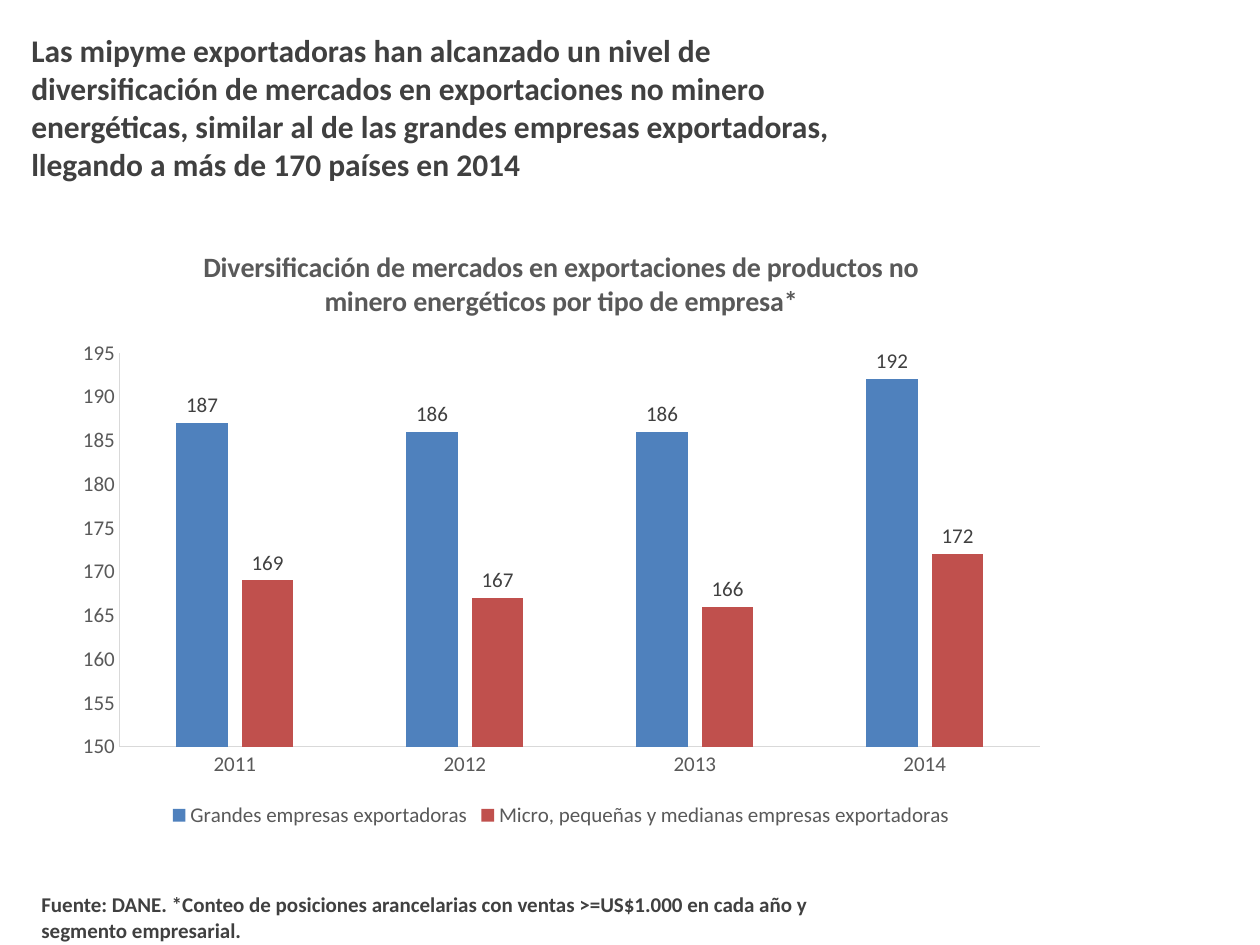
import pptx
import pptx.chart.data
import pptx.dml.color
import pptx.enum.chart
import pptx.enum.text
import pptx.util

Inches = pptx.util.Inches
DARK, GREY, PALE = "404040", "595959", "D9D9D9"
YEARS = ["2011", "2012", "2013", "2014"]
SERIES = [
    ("Grandes empresas exportadoras", (187, 186, 186, 192), "4F81BD"),
    ("Micro, pequeñas y medianas empresas exportadoras", (169, 167, 166, 172), "C0504D"),
]


def color(hex_text):
    return pptx.dml.color.RGBColor.from_string(hex_text)


class SlideBuilder:
    """Holds the font and the current slide, and adds styled elements to it."""

    def __init__(self, presentation, font_name="Calibri"):
        self.font_name = font_name
        self.slide = presentation.slides.add_slide(presentation.slide_layouts[6])

    def style(self, font, size, hex_text, bold=False):
        font.name = self.font_name
        font.size = pptx.util.Pt(size)
        font.bold = bold
        font.color.rgb = color(hex_text)

    def text(self, left, top, width, height, wording, size):
        shape = self.slide.shapes.add_textbox(
            Inches(left), Inches(top), Inches(width), Inches(height))
        frame = shape.text_frame
        frame.word_wrap = True
        frame.auto_size = pptx.enum.text.MSO_AUTO_SIZE.SHAPE_TO_FIT_TEXT
        paragraph = frame.paragraphs[0]
        paragraph.text = wording
        self.style(paragraph.font, size, DARK, bold=True)

    def axis(self, axis):
        axis.major_tick_mark = pptx.enum.chart.XL_TICK_MARK.NONE
        axis.minor_tick_mark = pptx.enum.chart.XL_TICK_MARK.NONE
        axis.has_major_gridlines = False
        axis.format.line.color.rgb = color(PALE)
        axis.format.line.width = pptx.util.Pt(0.75)
        self.style(axis.tick_labels.font, 12, GREY)

    def column_chart(self, left, top, width, height, title, categories, series_list):
        data = pptx.chart.data.CategoryChartData(number_format="#,##0")
        data.categories = categories
        for name, values, _ in series_list:
            data.add_series(name, values)
        chart = self.slide.shapes.add_chart(
            pptx.enum.chart.XL_CHART_TYPE.COLUMN_CLUSTERED,
            Inches(left), Inches(top), Inches(width), Inches(height), data).chart
        self.style(chart.font, 10, "000000")

        chart.has_title = True
        paragraph = chart.chart_title.text_frame.paragraphs[0]
        paragraph.text = title
        self.style(paragraph.font, 16, GREY, bold=True)
        chart.chart_title.include_in_layout = False

        chart.has_legend = True
        chart.legend.position = pptx.enum.chart.XL_LEGEND_POSITION.BOTTOM
        chart.legend.include_in_layout = False
        self.style(chart.legend.font, 12, GREY)

        self.axis(chart.category_axis)
        self.axis(chart.value_axis)
        chart.value_axis.minimum_scale = 150
        chart.value_axis.maximum_scale = 195
        chart.value_axis.major_unit = 5
        chart.value_axis.tick_labels.number_format = "#,##0"
        chart.value_axis.tick_labels.number_format_is_linked = False

        plot = chart.plots[0]
        plot.gap_width = 219
        plot.overlap = -27
        plot.vary_by_categories = False
        for series, (_, _, fill) in zip(plot.series, series_list):
            series.format.fill.solid()
            series.format.fill.fore_color.rgb = color(fill)
            series.invert_if_negative = False
            labels = series.data_labels
            labels.show_value = True
            labels.position = pptx.enum.chart.XL_LABEL_POSITION.OUTSIDE_END
            self.style(labels.font, 12, DARK)


def main():
    presentation = pptx.Presentation()
    presentation.slide_width = Inches(10)
    presentation.slide_height = Inches(7.5)
    builder = SlideBuilder(presentation)
    builder.text(
        0.15, 0.2, 6.7, 1.31,
        "Las mipyme exportadoras han alcanzado un nivel de diversificación de mercados en "
        "exportaciones no minero energéticas, similar al de las grandes empresas "
        "exportadoras, llegando a más de 170 países en 2014", 18)
    builder.column_chart(
        0.5, 1.78, 7.91, 4.83,
        "Diversificación de mercados en exportaciones de productos no minero energéticos "
        "por tipo de empresa*", YEARS, SERIES)
    builder.text(
        0.23, 7.03, 6.61, 0.5,
        "Fuente: DANE. *Conteo de posiciones arancelarias con ventas >=US$1.000 en cada "
        "año y segmento empresarial.", 12)
    presentation.save("out.pptx")


if __name__ == "__main__":
    main()
